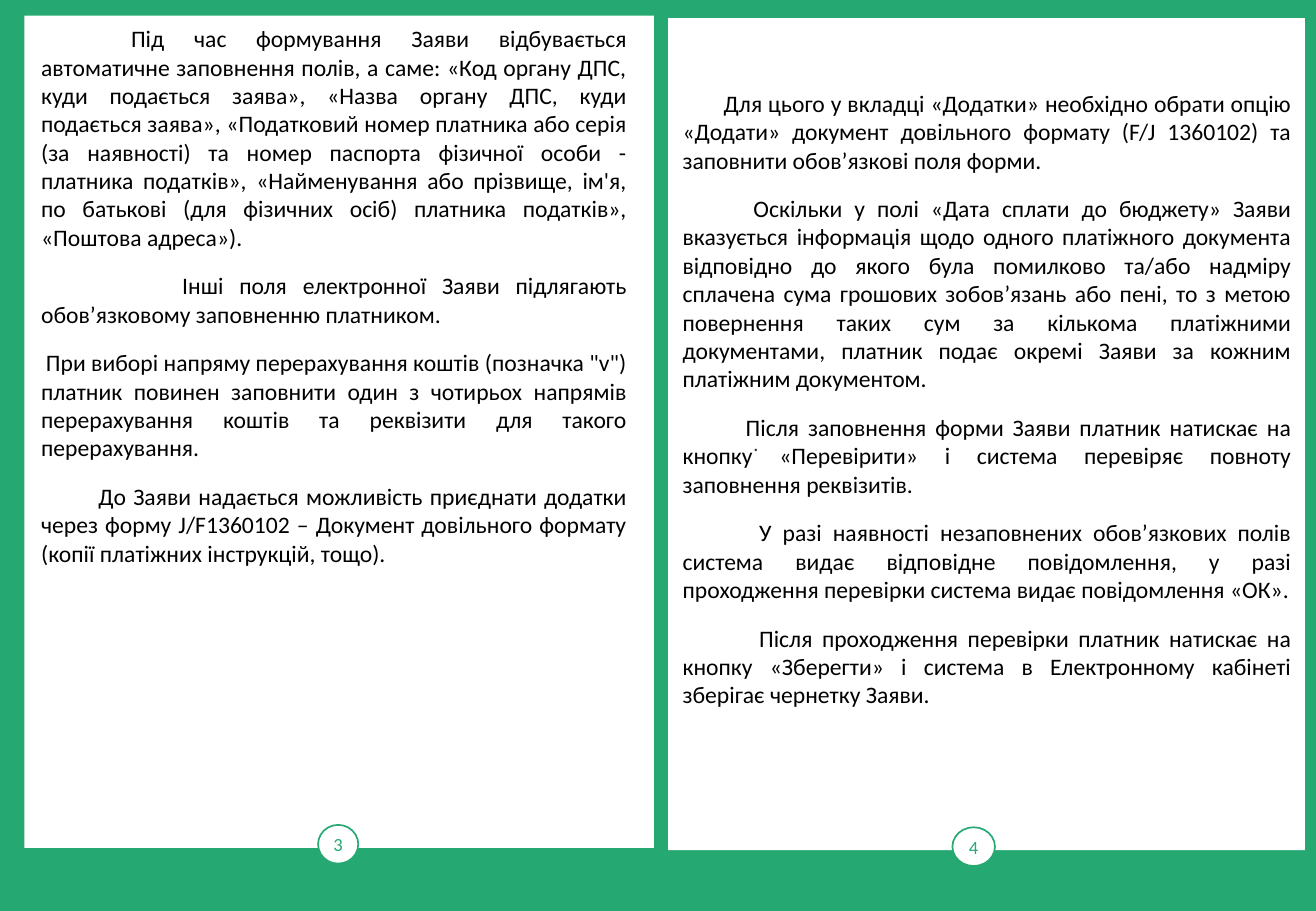
from pptx import Presentation
from pptx.dml.color import RGBColor
from pptx.enum.shapes import MSO_SHAPE as Preset
from pptx.enum.text import MSO_ANCHOR as Anchor, PP_ALIGN as Align
from pptx.util import Cm, Pt

GREEN = RGBColor(0x25, 0xA8, 0x72)
WHITE = RGBColor(0xFF, 0xFF, 0xFF)
BLACK = RGBColor(0, 0, 0)
GREY = RGBColor(0x33, 0x33, 0x33)
FONT = "Calibri"

FORM_FILLING = [
    (1.88, "Під час формування Заяви відбувається автоматичне заповнення полів, а саме: "
           "«Код органу ДПС, куди подається заява», «Назва органу ДПС, куди подається заява», "
           "«Податковий номер платника або серія (за наявності) та номер паспорта фізичної "
           "особи - платника податків», «Найменування або прізвище, ім'я, по батькові "
           "(для фізичних осіб) платника податків», «Поштова адреса»)."),
    (2.95, "Інші поля електронної Заяви підлягають обов’язковому заповненню платником."),
    (0.1, "При виборі напряму перерахування коштів (позначка \"v\") платник повинен заповнити "
          "один з чотирьох напрямів перерахування коштів та реквізити для такого перерахування."),
    (1.2, "До Заяви надається можливість приєднати додатки через форму J/F1360102 – Документ "
          "довільного формату (копії платіжних інструкцій, тощо)."),
]
CHECKING = [
    (0.86, "Для цього у вкладці «Додатки» необхідно обрати опцію «Додати» документ довільного "
           "формату (F/J 1360102) та заповнити обов’язкові поля форми."),
    (1.48, "Оскільки у полі «Дата сплати до бюджету» Заяви вказується інформація щодо одного "
           "платіжного документа відповідно до якого була помилково та/або надміру сплачена "
           "сума грошових зобов’язань або пені, то з метою повернення таких сум за кількома "
           "платіжними документами, платник подає окремі Заяви за кожним платіжним документом."),
    (1.32, "Після заповнення форми Заяви платник натискає на кнопку «Перевірити» і система "
           "перевіряє повноту заповнення реквізитів."),
    (1.6, "У разі наявності незаповнених обов’язкових полів система видає відповідне "
          "повідомлення, у разі проходження перевірки система видає повідомлення «ОК»."),
    (1.6, "Після проходження перевірки платник натискає на кнопку «Зберегти» і система "
          "в Електронному кабінеті зберігає чернетку Заяви."),
]


def add_span(para, text, size, color):
    span = para.add_run()
    span.text = text
    span.font.name = FONT
    span.font.size = Pt(size)
    span.font.color.rgb = color


def add_white_shape(group, preset, area):
    shape = group.shapes.add_shape(preset, *map(Cm, area))
    shape.shadow.inherit = False
    shape.fill.solid()
    shape.fill.fore_color.rgb = WHITE
    shape.line.fill.background()
    return shape


def add_sheet(page, sheet_area, badge_area, number):
    group = page.shapes.add_group_shape()
    add_white_shape(group, Preset.RECTANGLE, sheet_area)
    badge = add_white_shape(group, Preset.OVAL, badge_area)
    badge.line.color.rgb = GREEN
    badge.line.width = Pt(1)
    frame = badge.text_frame
    frame.margin_left = frame.margin_right = frame.margin_top = frame.margin_bottom = 0
    frame.vertical_anchor = Anchor.MIDDLE
    para = frame.paragraphs[0]
    para.alignment = Align.CENTER
    add_span(para, number, 11, GREEN)


def add_text(page, area, items, size=14, color=BLACK, anchor=Anchor.TOP, gap=6):
    box = page.shapes.add_textbox(*map(Cm, area))
    frame = box.text_frame
    frame.word_wrap = True
    frame.vertical_anchor = anchor
    for index, (indent, text) in enumerate(items):
        para = frame.add_paragraph() if index else frame.paragraphs[0]
        para.alignment = Align.JUSTIFY
        para.space_before = para.space_after = Pt(gap)
        para._p.get_or_add_pPr().set("indent", str(Cm(indent)))
        add_span(para, text, size, color)


def main():
    deck = Presentation()
    deck.slide_width, deck.slide_height = Cm(27.51), Cm(19.05)
    page = deck.slides.add_slide(deck.slide_layouts[6])
    page.background.fill.solid()
    page.background.fill.fore_color.rgb = GREEN

    add_sheet(page, (0.51, 0.33, 13.16, 17.4), (6.65, 17.25, 0.84, 0.81), "3")
    add_sheet(page, (13.97, 0.38, 13.31, 17.4), (19.91, 17.3, 0.89, 0.81), "4")
    add_text(page, (14.25, 0.58, 12.75, 17.37), [(1.25, ".")], 12, GREY, Anchor.MIDDLE, 0)
    add_text(page, (14.02, 1.73, 13.23, 14), CHECKING)
    add_text(page, (0.61, 0.38, 12.75, 16.5), FORM_FILLING)
    deck.save("out.pptx")


if __name__ == "__main__":
    main()
